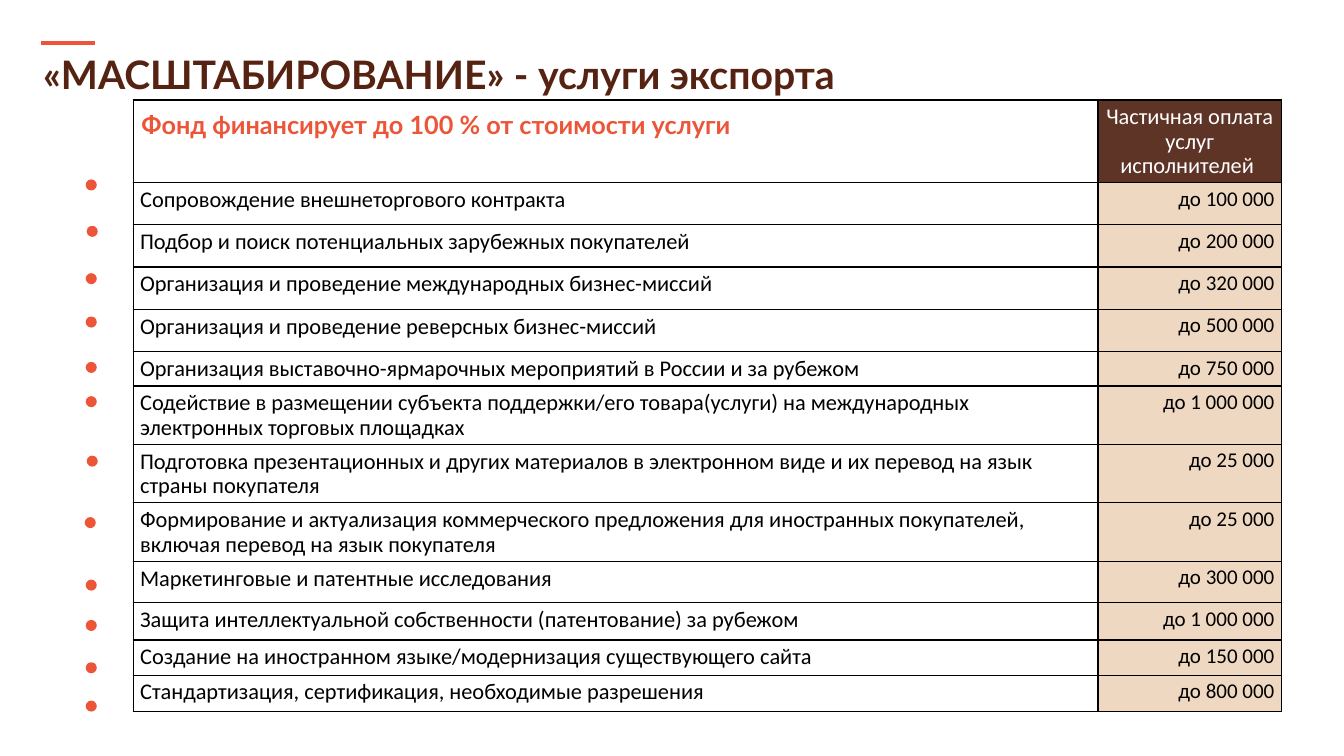
import lxml.etree
import pptx
import pptx.dml.color
import pptx.enum.shapes
import pptx.enum.text
import pptx.oxml.ns
import pptx.util

TITLE = "«МАСШТАБИРОВАНИЕ» - услуги экспорта"
SUBTITLE = "Фонд финансирует до 100 % от стоимости услуги"
PRICE_HEADING = "Частичная оплата услуг исполнителей "

# Service, price, row height, left and top of its bullet dot
SERVICES = [
    ("Сопровождение внешнеторгового контракта", "до 100 000", 42, 85, 178),
    ("Подбор и поиск потенциальных зарубежных покупателей", "до 200 000", 42, 86, 224),
    ("Организация и проведение международных бизнес-миссий", "до 320 000", 42, 85, 271),
    ("Организация и проведение реверсных бизнес-миссий", "до 500 000", 42, 85, 314),
    ("Организация выставочно-ярмарочных мероприятий в России и за рубежом",
     "до 750 000", 33, 85, 359),
    ("Содействие в размещении субъекта поддержки/его товара(услуги) на международных "
     "электронных торговых площадках", "до 1 000 000", 56, 85, 393),
    ("Подготовка презентационных и других материалов в электронном виде и их перевод "
     "на язык страны покупателя", "до 25 000", 51, 86, 452),
    ("Формирование и актуализация коммерческого предложения для иностранных покупателей, "
     "включая перевод на язык покупателя", "до 25 000", 57, 84, 513),
    ("Маркетинговые и патентные исследования", "до 300 000", 41, 85, 575),
    ("Защита интеллектуальной собственности (патентование) за рубежом",
     "до 1 000 000", 37, 85, 615),
    ("Создание на иностранном языке/модернизация существующего сайта",
     "до 150 000", 35, 85, 657),
    ("Стандартизация, сертификация, необходимые разрешения", "до 800 000", 36, 85, 695),
]
HEADER_HEIGHT = 72
COLUMNS = (957, 182)
DOT = 11
HEAVY_ROW = 11  # the row with a heavy rule above it

THEME = {
    "accent": "ED5539", "title": "562212", "header": "5E3427", "price": "EED8C2",
    "text": "000000", "light": "FFFFFF",
    "heading_font": "Lato", "body_font": "Calibri",
    "title_size": 28, "subtitle_size": 18, "body_size": 16, "price_size": 15,
    "rule": 1, "heavy_rule": 1.5,
}
ALIGN = pptx.enum.text.PP_ALIGN


def px(length):
    """Turn px (100 to the inch) into EMU."""
    return pptx.util.Emu(length * 9144)


def color(name):
    return pptx.dml.color.RGBColor.from_string(THEME[name])


def style_span(span, font, size, ink, bold=False):
    span.font.name = THEME[font]
    span.font.size = pptx.util.Pt(THEME[size])
    span.font.color.rgb = color(ink)
    span.font.bold = bold


def add_text_box(page, left, top, width, height):
    frame = page.shapes.add_textbox(px(left), px(top), px(width), px(height)).text_frame
    frame.word_wrap = True
    return frame.paragraphs[0]


def add_borders(cell, widths):
    """Rule a cell; widths in points go left, right, top, bottom."""
    properties = cell._tc.get_or_add_tcPr()
    for position, (side, width) in enumerate(zip("LRTB", widths)):
        line = lxml.etree.Element(pptx.oxml.ns.qn(f"a:ln{side}"),
                                  w=str(pptx.util.Pt(width)))
        fill = lxml.etree.SubElement(line, pptx.oxml.ns.qn("a:solidFill"))
        lxml.etree.SubElement(fill, pptx.oxml.ns.qn("a:srgbClr"), val=THEME["text"])
        properties.insert(position, line)


def fill_cell(cell, text, align, size, ink, fill):
    cell.margin_left = cell.margin_right = px(7)
    cell.margin_top = cell.margin_bottom = px(5)
    if fill:
        cell.fill.solid()
        cell.fill.fore_color.rgb = color(fill)
    else:
        cell.fill.background()
    para = cell.text_frame.paragraphs[0]
    para.text = text
    para.alignment = align
    para.line_spacing = 0.9
    for span in para.runs:
        style_span(span, "body_font", size, ink)


def add_services_table(page):
    heights = [HEADER_HEIGHT] + [service[2] for service in SERVICES]
    table = page.shapes.add_table(len(heights), len(COLUMNS), px(132), px(99),
                                  px(sum(COLUMNS)), px(sum(heights))).table
    table.first_row = table.horz_banding = False
    for column, width in zip(table.columns, COLUMNS):
        column.width = px(width)
    for row, height in zip(table.rows, heights):
        row.height = px(height)

    fill_cell(table.cell(0, 0), "", ALIGN.LEFT, "body_size", "text", None)
    fill_cell(table.cell(0, 1), PRICE_HEADING, ALIGN.CENTER, "body_size", "light", "header")
    for index, (service, price, *_) in enumerate(SERVICES, start=1):
        fill_cell(table.cell(index, 0), service, ALIGN.LEFT, "body_size", "text", None)
        fill_cell(table.cell(index, 1), price, ALIGN.RIGHT, "price_size", "text", "price")

    thin, heavy = THEME["rule"], THEME["heavy_rule"]
    for index in range(len(heights)):
        above = heavy if index in (0, HEAVY_ROW) else thin
        below = heavy if index + 1 == HEAVY_ROW else thin
        add_borders(table.cell(index, 0), (thin, thin, above, below))
        add_borders(table.cell(index, 1), (thin, heavy, above, below))


def add_dot(page, left, top):
    dot = page.shapes.add_shape(pptx.enum.shapes.MSO_SHAPE.OVAL,
                                px(left), px(top), px(DOT), px(DOT))
    dot.shadow.inherit = False
    dot.fill.solid()
    dot.fill.fore_color.rgb = color("accent")
    dot.line.fill.background()


def main():
    deck = pptx.Presentation()
    deck.slide_width, deck.slide_height = px(1333), px(750)
    page = deck.slides.add_slide(deck.slide_layouts[6])

    accent = page.shapes.add_connector(pptx.enum.shapes.MSO_CONNECTOR.STRAIGHT,
                                       px(41), px(43), px(94), px(43))
    accent.line.color.rgb = color("accent")
    accent.line.width = pptx.util.Pt(3)
    lxml.etree.SubElement(accent._element.spPr, pptx.oxml.ns.qn("a:effectLst"))

    title = add_text_box(page, 33, 50, 1044, 90)
    title.text = TITLE
    title.line_spacing = 0.9
    style_span(title.runs[0], "heading_font", "title_size", "title", bold=True)

    subtitle = add_text_box(page, 97, 104, 666, 70)
    subtitle.alignment = ALIGN.CENTER
    spacer, phrase = subtitle.add_run(), subtitle.add_run()
    spacer.text, phrase.text = " ", SUBTITLE
    style_span(spacer, "body_font", "body_size", "text")
    style_span(phrase, "heading_font", "subtitle_size", "accent", bold=True)

    add_services_table(page)
    for *_, left, top in SERVICES:
        add_dot(page, left, top)
    deck.save("out.pptx")


if __name__ == "__main__":
    main()
